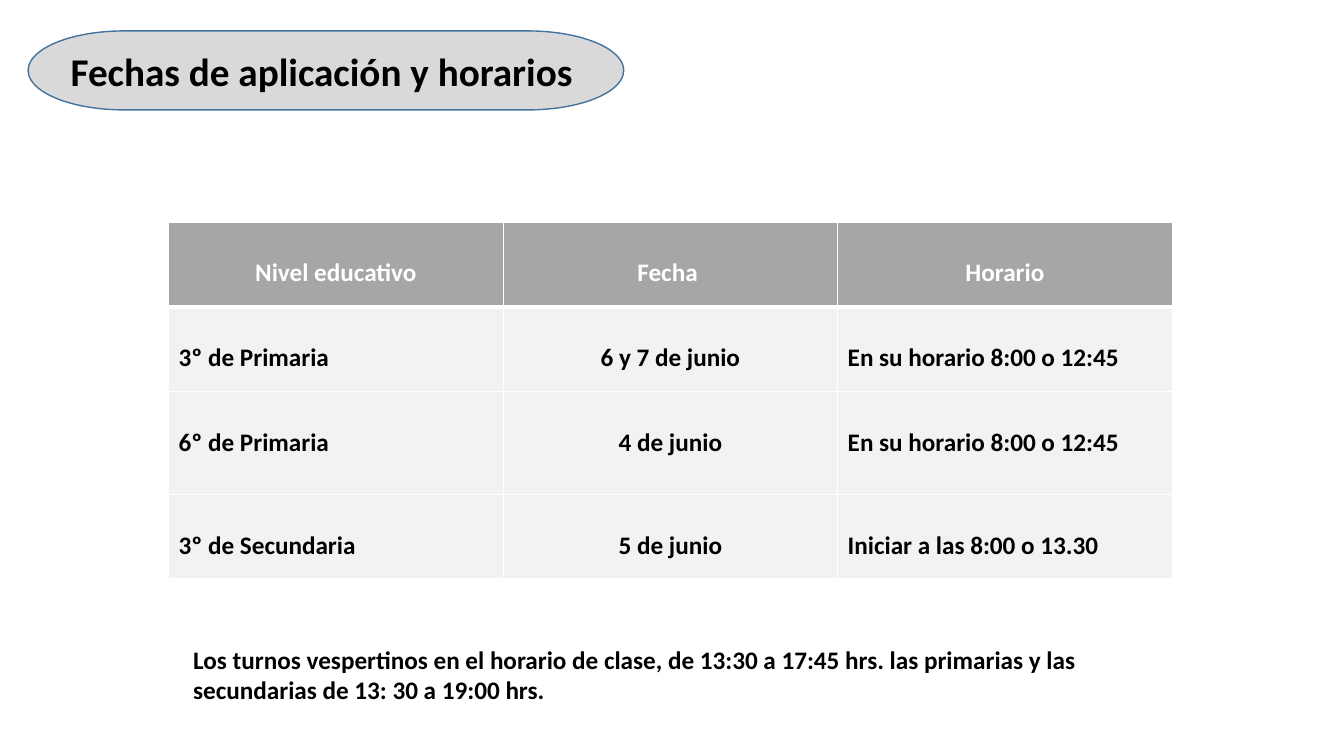
from lxml import etree
from pptx import Presentation
from pptx.dml.color import RGBColor
from pptx.enum.shapes import MSO_SHAPE
from pptx.enum.text import MSO_ANCHOR, MSO_AUTO_SIZE, PP_ALIGN
from pptx.oxml.ns import qn
from pptx.util import Cm, Pt

TERMINATOR = MSO_SHAPE.FLOWCHART_TERMINATOR
LEFT, CENTER = PP_ALIGN.LEFT, PP_ALIGN.CENTER
MIDDLE = MSO_ANCHOR.MIDDLE
GROW = MSO_AUTO_SIZE.SHAPE_TO_FIT_TEXT

# Content
TITLE = "Fechas de aplicación y horarios "
SCHEDULE = [
    ("Nivel educativo", "Fecha ", "Horario"),
    ("3º de Primaria", "6 y 7 de junio", "En su horario 8:00 o 12:45"),
    ("6º de Primaria", "4 de junio", "En su horario 8:00 o 12:45"),
    ("3º de Secundaria", "5 de junio", "Iniciar a las 8:00 o 13.30"),
]
NOTE = ("Los turnos vespertinos en el horario de clase, de 13:30 a 17:45 hrs. "
        "las primarias y las secundarias de 13: 30 a 19:00 hrs.")

# Layout in cm
COLUMN_WIDTH = 8.43
ROW_HEIGHTS = [2.13, 2.13, 2.6, 2.13]
CELL_TOP_MARGIN = 0.9
BLACK, WHITE = "000000", "FFFFFF"


def color(value):
    return RGBColor.from_string(value)


def write(frame, text, size, ink, align=LEFT):
    paragraph = frame.paragraphs[0]
    paragraph.alignment = align
    run = paragraph.add_run()
    run.text = text
    run.font.name = "Calibri"
    run.font.size = Pt(size)
    run.font.bold = True
    run.font.color.rgb = color(ink)


def add_borders(cell, bottom_width):
    properties = cell._tc.get_or_add_tcPr()
    widths = {"a:lnL": 1, "a:lnR": 1, "a:lnT": 1, "a:lnB": bottom_width}
    for position, (side, width) in enumerate(widths.items()):
        border = etree.Element(qn(side), w=str(Pt(width)))
        fill = etree.SubElement(border, qn("a:solidFill"))
        etree.SubElement(fill, qn("a:srgbClr"), val=WHITE)
        properties.insert(position, border)


prs = Presentation()
prs.slide_width, prs.slide_height = Cm(33.87), Cm(19.05)
slide = prs.slides.add_slide(prs.slide_layouts[6])

# Title
heading = slide.shapes.add_shape(TERMINATOR, Cm(0.71), Cm(0.78), Cm(15.01), Cm(1.99))
heading.shadow.inherit = False
heading.fill.solid()
heading.fill.fore_color.rgb = color("D9D9D9")
heading.line.color.rgb = color("43739E")
heading.line.width = Pt(1)
heading.text_frame.vertical_anchor = MIDDLE
write(heading.text_frame, TITLE, 28, BLACK, CENTER)

# Schedule table
columns = len(SCHEDULE[0])
schedule = slide.shapes.add_table(
    len(SCHEDULE), columns, Cm(4.25), Cm(5.6),
    Cm(columns * COLUMN_WIDTH), Cm(sum(ROW_HEIGHTS))).table
for column in schedule.columns:
    column.width = Cm(COLUMN_WIDTH)
for r, (texts, height) in enumerate(zip(SCHEDULE, ROW_HEIGHTS)):
    schedule.rows[r].height = Cm(height)
    is_header = r == 0
    for c, text in enumerate(texts):
        cell = schedule.cell(r, c)
        cell.margin_top = Cm(CELL_TOP_MARGIN)
        cell.fill.solid()
        cell.fill.fore_color.rgb = color("A6A6A6" if is_header else "F2F2F2")
        add_borders(cell, 3 if is_header else 1)
        write(cell.text_frame, text, 18, WHITE if is_header else BLACK,
              CENTER if is_header or c == 1 else LEFT)

# Note on afternoon shifts
note = slide.shapes.add_textbox(Cm(4.62), Cm(16.1), Cm(24.92), Cm(1.8))
note.text_frame.word_wrap = True
note.text_frame.auto_size = GROW
write(note.text_frame, NOTE, 18, BLACK)

prs.save("out.pptx")
